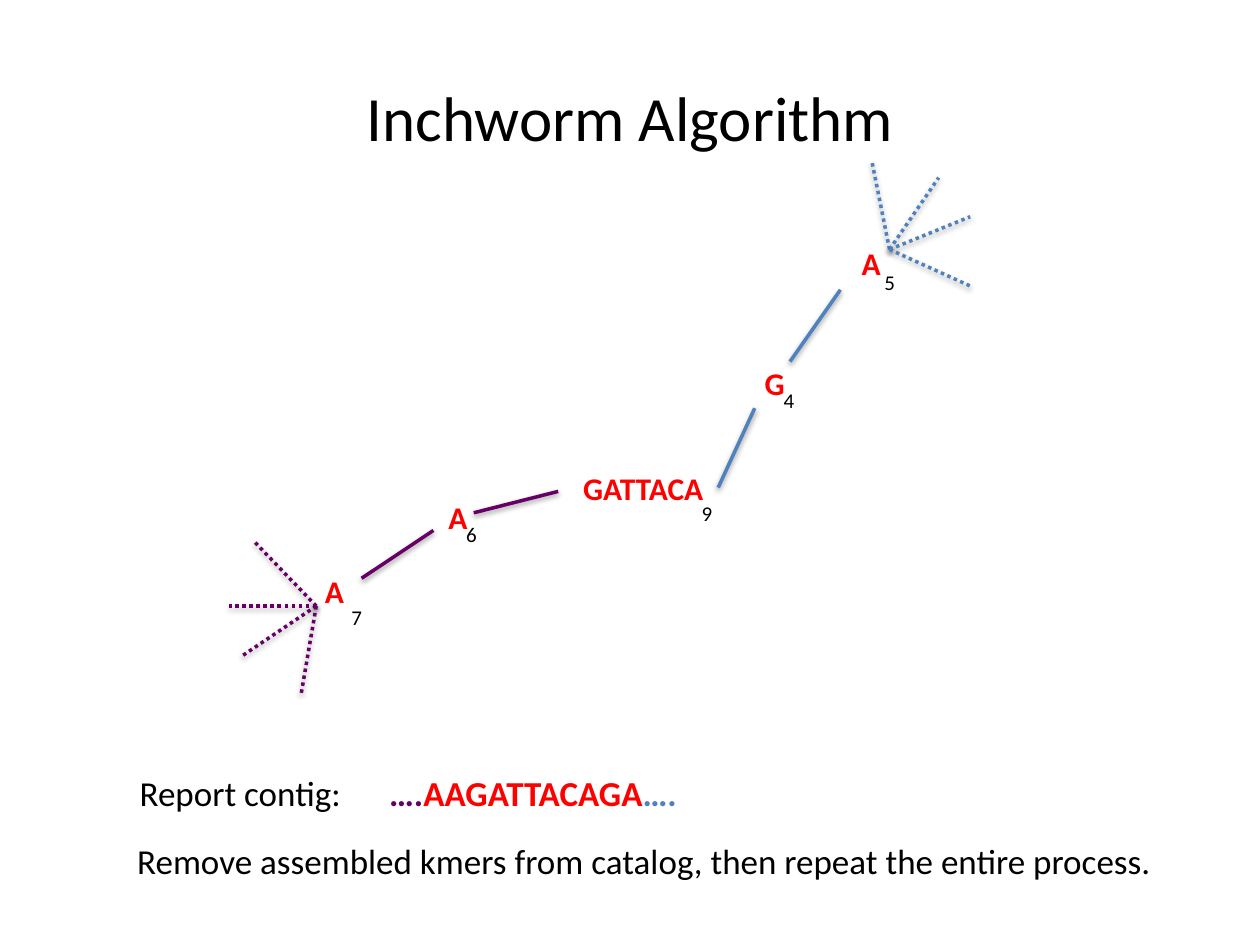
from collections import namedtuple

from lxml import etree
from pptx import Presentation
from pptx import util as u
from pptx.dml.color import RGBColor
from pptx.enum import dml, shapes, text
from pptx.oxml.ns import qn

PX = 9144
FONT = "Calibri"
COLORS = {
    "ink": "000000",
    "base": "FF0000",
    "right": "4F81BD",
    "left": "660066",
}

Box = namedtuple("Box", "left top width height")
Node = namedtuple("Node", "letter at count count_at")


def px(value):
    return u.Emu(value * PX)


def inside(box, point, width=0, height=0):
    return Box(box.left + point[0], box.top + point[1], width, height)


def place(shape, box):
    shape.left, shape.top, shape.width, shape.height = map(px, box)


def add_run(paragraph, content, size=18, color="ink", bold=False):
    run = paragraph.add_run()
    run.text = content
    run.font.name = FONT
    run.font.size = u.Pt(size)
    run.font.bold = bold
    run.font.color.rgb = RGBColor.from_string(COLORS[color])


def add_text(slide, box, content, **formatting):
    shape = slide.shapes.add_textbox(*map(px, box))
    frame = shape.text_frame
    frame.word_wrap = False
    frame.auto_size = text.MSO_AUTO_SIZE.SHAPE_TO_FIT_TEXT
    paragraph = frame.paragraphs[0]
    add_run(paragraph, content, **formatting)
    return paragraph


def add_line(container, box, start, end, color, dotted=False):
    begin, finish = inside(box, start), inside(box, end)
    line = container.shapes.add_connector(
        shapes.MSO_CONNECTOR.STRAIGHT,
        px(begin.left), px(begin.top), px(finish.left), px(finish.top),
    ).line
    line.width = u.Pt(2)
    line.color.rgb = RGBColor.from_string(COLORS[color])
    if dotted:
        line.dash_style = dml.MSO_LINE.ROUND_DOT


def add_tab_stop(paragraph, position):
    tabs = etree.SubElement(paragraph._p.get_or_add_pPr(), qn("a:tabLst"))
    etree.SubElement(tabs, qn("a:tab"), pos=str(px(position)), algn="l")


def draw_title(slide, box):
    title = slide.shapes.title
    place(title, box)
    frame = title.text_frame
    frame.vertical_anchor = text.MSO_ANCHOR.MIDDLE
    paragraph = frame.paragraphs[0]
    paragraph.alignment = text.PP_ALIGN.CENTER
    add_run(paragraph, "Inchworm Algorithm", size=36)


def draw_node(slide, box, node, width=36):
    add_text(slide, inside(box, node.at, width, 40), node.letter,
             color="base", bold=True)
    add_text(slide, inside(box, node.count_at, 29, 30), node.count, size=12)


def draw_branch(slide, box, color, nodes, edges, hub, tips):
    for start, end in edges:
        add_line(slide, box, start, end, color)
    for node in nodes:
        draw_node(slide, box, node)
    fan = slide.shapes.add_group_shape()
    for tip in tips:
        add_line(fan, box, hub, tip, color, dotted=True)


def draw_summary(slide, box):
    contig = add_text(slide, inside(box, (2, 0), 450, 44),
                      "Report contig:\t", size=20)
    add_tab_stop(contig, 198)
    for content, color in (("….", "left"), ("AAGATTACAGA", "base"), ("….", "right")):
        add_run(contig, content, size=20, color=color, bold=True)
    add_text(slide, inside(box, (0, 54), box.width, 44),
             "Remove assembled kmers from catalog, then repeat the entire process.",
             size=20)


def main():
    presentation = Presentation()
    presentation.slide_width, presentation.slide_height = px(1000), px(750)
    slide = presentation.slides.add_slide(presentation.slide_layouts.get_by_name("Title Only"))

    draw_title(slide, Box(50, 30, 900, 125))
    draw_node(slide, Box(453, 367, 123, 55),
              Node("GATTACA", (0, 0), "9", (94, 25)), width=117)
    draw_branch(
        slide, Box(547, 128, 223, 259), "right",
        nodes=[Node("G", (50, 156), "4", (65, 175)),
               Node("A", (127, 61), "5", (145, 81))],
        edges=[((23, 259), (52, 196)), ((80, 159), (120, 102))],
        hub=(159, 70),
        tips=[(145, 0), (198, 13), (223, 44), (223, 99)],
    )
    draw_branch(
        slide, Box(182, 390, 261, 161), "left",
        nodes=[Node("A", (164, 0), "6", (178, 19)),
               Node("A", (66, 59), "7", (87, 85))],
        edges=[((261, 0), (194, 17)), ((162, 31), (105, 69))],
        hub=(69, 91),
        tips=[(20, 40), (0, 91), (11, 130), (57, 161)],
    )
    draw_summary(slide, Box(99, 607, 831, 98))
    presentation.save("out.pptx")


if __name__ == "__main__":
    main()
